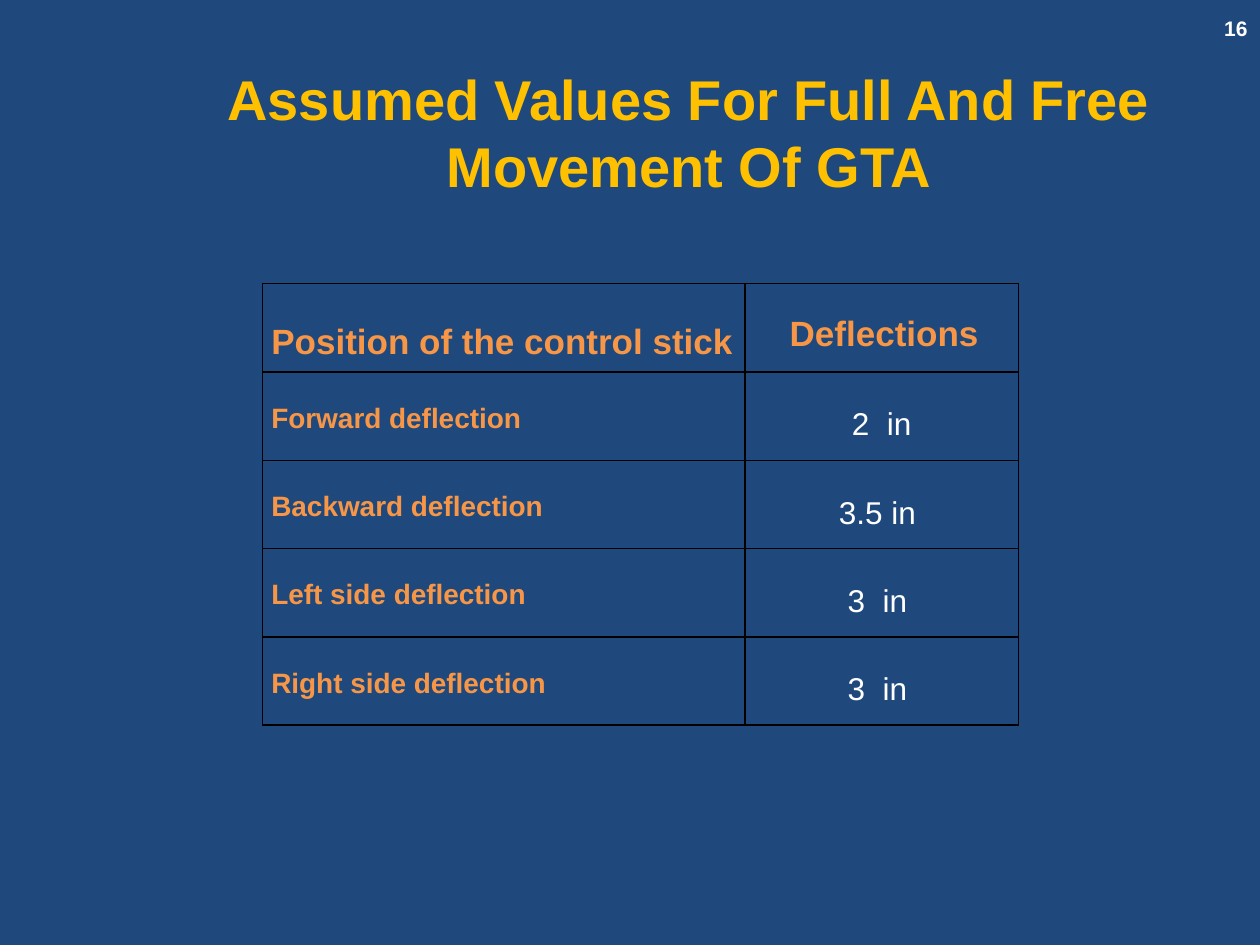
from lxml.etree import SubElement as Sub
from pptx import Presentation
from pptx.dml.color import RGBColor
from pptx.enum.text import MSO_ANCHOR as Anchor, PP_ALIGN as Align
from pptx.oxml.ns import qn
from pptx.util import Cm, Pt

BLUE, GOLD, ORANGE, WHITE, BLACK = "1F497D", "FFC000", "F79646", "FFFFFF", "000000"
ROWS = [
    ("Forward deflection", "2  in"),
    ("Backward deflection", "3.5 in "),
    ("Left side deflection", "3  in "),
    ("Right side deflection", "3  in "),
]


def paint(fill, color):
    fill.solid()
    fill.fore_color.rgb = RGBColor.from_string(color)


def write(frame, text, size, color, align, bold=True):
    frame.text = text
    para = frame.paragraphs[0]
    para.alignment = align
    font = para.font
    font.name, font.size, font.bold = "Arial", Pt(size), bold
    font.color.rgb = RGBColor.from_string(color)
    return para


def place(shape, left, top, width, height):
    shape.left, shape.top = Cm(left), Cm(top)
    shape.width, shape.height = Cm(width), Cm(height)


def add_label(slide, box, text, size, color, align, anchor, wrap):
    frame = slide.shapes.add_textbox(*map(Cm, box)).text_frame
    frame.word_wrap = wrap
    frame.vertical_anchor = anchor
    write(frame, text, size, color, align)


def style_cell(cell):
    cell.margin_left = cell.margin_right = Cm(0.18)
    cell.margin_top = cell.margin_bottom = 0
    props = cell._tc.get_or_add_tcPr()
    for side in ("a:lnL", "a:lnR", "a:lnT", "a:lnB"):
        line = Sub(props, qn(side), w=str(Pt(1)))
        Sub(Sub(line, qn("a:solidFill")), qn("a:srgbClr"), val=BLACK)
    cell.fill.background()


def fill_cell(cell, *style):
    write(cell.text_frame, *style).line_spacing = 2.0


def add_grid(slide):
    count = len(ROWS) + 1
    high = 1.78
    box = map(Cm, (5.29, 5.72, 15.24, high * count))
    table = slide.shapes.add_table(count, 2, *box).table
    table.first_row = table.horz_banding = False
    table.columns[0].width, table.columns[1].width = Cm(9.73), Cm(5.51)
    for row in table.rows:
        row.height = Cm(high)
    for cell in table.iter_cells():
        style_cell(cell)
    fill_cell(table.cell(0, 0), "Position of the control stick", 20, ORANGE, Align.JUSTIFY)
    for i, (name, value) in enumerate(ROWS, 1):
        fill_cell(table.cell(i, 0), name, 16, ORANGE, Align.JUSTIFY)
        fill_cell(table.cell(i, 1), value, 18, WHITE, Align.CENTER, False)


def main():
    deck = Presentation()
    deck.slide_width, deck.slide_height = Cm(25.4), Cm(19.05)
    slide = deck.slides.add_slide(deck.slide_layouts[5])
    paint(slide.background.fill, BLUE)

    # Title
    title = slide.shapes.title
    place(title, 2.46, 1.07, 22.86, 3.18)
    title.text_frame.vertical_anchor = Anchor.MIDDLE
    write(title.text_frame, "Assumed Values For Full And Free Movement Of GTA",
          32, GOLD, Align.CENTER)

    # Page number
    add_label(slide, (23.7, 0.05, 1.7, 1.02), "16", 12, WHITE,
              Align.RIGHT, Anchor.MIDDLE, True)

    # Table, with the second heading laid over its top right cell
    add_grid(slide)
    add_label(slide, (15.67, 6.15, 4.34, 1.12), "Deflections", 20, ORANGE,
              Align.JUSTIFY, Anchor.TOP, False)

    deck.save("out.pptx")


if __name__ == "__main__":
    main()
